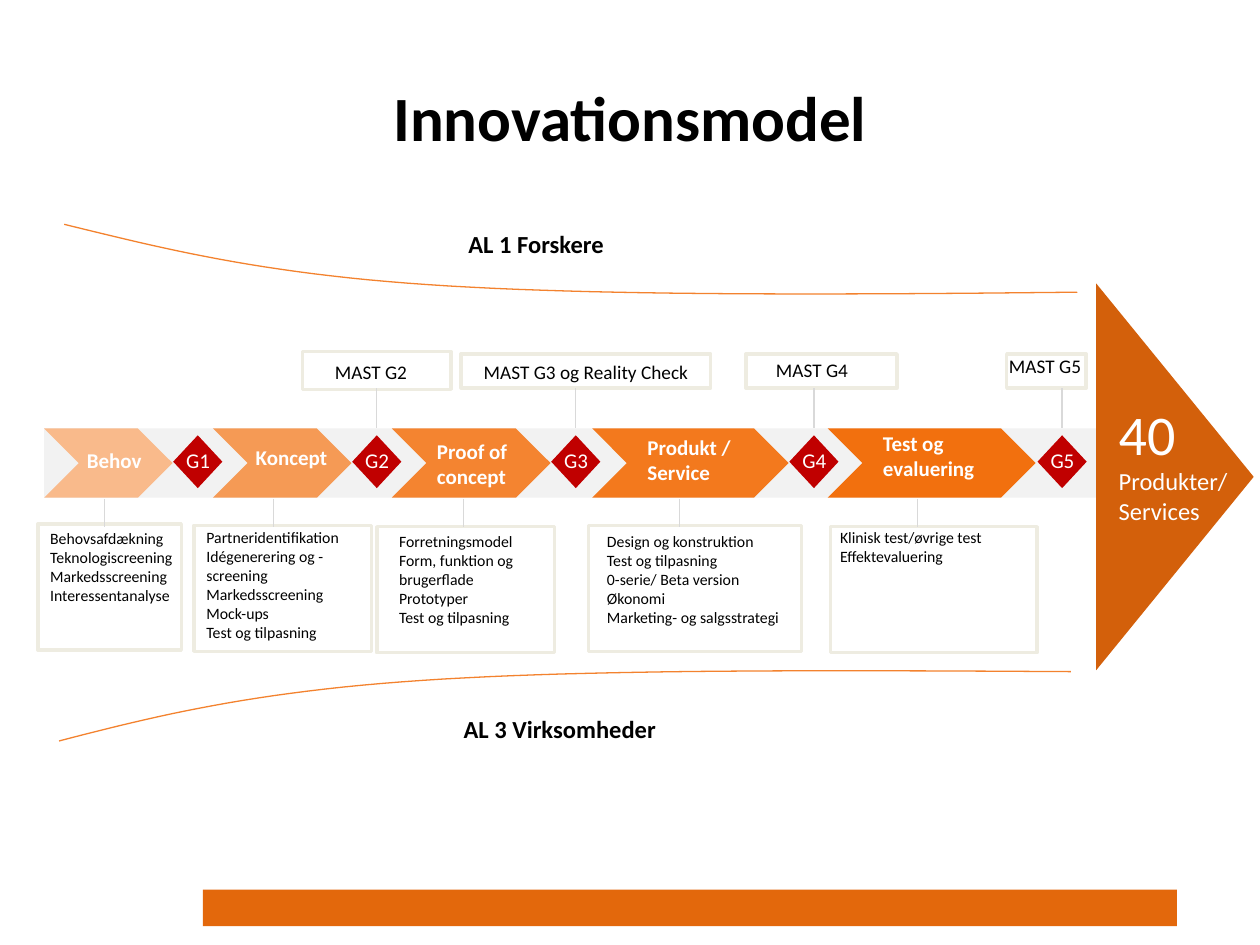
from dataclasses import dataclass
from lxml.etree import SubElement
from pptx import Presentation
from pptx.dml.color import RGBColor
from pptx.enum.shapes import MSO_CONNECTOR, MSO_SHAPE as Shape
from pptx.enum.text import MSO_ANCHOR, PP_ALIGN
from pptx.oxml.ns import qn
from pptx.util import Pt


@dataclass(frozen=True)
class Theme:
    font: str = "Calibri"
    black: str = "000000"
    white: str = "FFFFFF"
    footer: str = "E3680C"
    band: str = "F2F2F2"
    arrow: str = "D3600B"
    gate: str = "C00000"
    curve: str = "F3822E"
    frame: str = "EEECE1"
    link: str = "D9D9D9"
    title: int = 36
    number: int = 32
    heading: int = 14
    stage: int = 12
    mast: int = 11
    detail: int = 9


t = Theme()
prs = Presentation()
prs.slide_width, prs.slide_height = Pt(720), Pt(540)
s = prs.slides.add_slide(prs.slide_layouts[5])


def add_shape(kind, box, fill=None, line=None):
    sp = s.shapes.add_shape(kind, *map(Pt, box))
    sp.shadow.inherit = False
    if fill:
        sp.fill.solid()
        sp.fill.fore_color.rgb = RGBColor.from_string(fill)
    else:
        sp.fill.background()
    if line:
        sp.line.color.rgb = RGBColor.from_string(line)
        sp.line.width = Pt(2)
    else:
        sp.line.fill.background()
    return sp


def write(tf, lines, sizes, color, bold=False):
    tf.word_wrap = True
    for i, (line, size) in enumerate(zip(lines, sizes)):
        p = tf.paragraphs[0] if i == 0 else tf.add_paragraph()
        r = p.add_run()
        r.text = line
        for name, value in {"name": t.font, "size": Pt(size), "bold": bold}.items():
            setattr(r.font, name, value)
        r.font.color.rgb = RGBColor.from_string(color)


title = s.shapes.title
for name, value in {"left": 36, "top": 21.6, "width": 648, "height": 90}.items():
    setattr(title, name, Pt(value))
write(title.text_frame, ["Innovationsmodel"], [t.title], t.black, True)
title.text_frame.vertical_anchor = MSO_ANCHOR.MIDDLE
title.text_frame.paragraphs[0].alignment = PP_ALIGN.CENTER

add_shape(Shape.RECTANGLE, (115.9, 508.3, 556.6, 20.9), t.footer)
add_shape(Shape.RECTANGLE, (25.2, 244.8, 601.2, 39.6), t.band)
add_shape(Shape.ISOSCELES_TRIANGLE, (560.9, 227.5, 221, 90), t.arrow).rotation = 90

texts = []
links = []

stages = [
    (25.2, 73.4, "F9BA8B", (42.5, 252, 54), ["Behov"]),
    (121.7, 79.2, "F59A55", (139, 250.6, 190), ["Koncept"]),
    (223.9, 90.7, "F48430", (242.6, 247, 190), ["Proof of", "concept"]),
    (338.4, 112.3, "F3791D", (362.9, 244.8, 190), ["Produkt /", "Service"]),
    (473, 118.8, "F2700E", (497.5, 242.6, 152), ["Test og", "evaluering"]),
]
for left, width, fill, place, lines in stages:
    add_shape(Shape.CHEVRON, (left, 244.8, width, 39.6), fill)
    texts.append((place, lines, t.stage, t.white, True))

for i, left in enumerate([97.9, 200.2, 313.9, 450, 591.8], 1):
    add_shape(Shape.FLOWCHART_DECISION, (left, 249.8, 30.2, 28.1), t.gate).rotation = 90
    texts.append(((left + 1.4, 252, 39.6), [f"G{i}"], t.stage, t.white, False))
    if i > 1:
        links.append((left + 15.1, 221.8, 244.8))

masts = [
    ((172.8, 200.9, 85, 21.6), (184.3, 202.3, 116), "MAST G2"),
    ((263.5, 202.3, 142.6, 19.4), (269.3, 202.3, 176), "MAST G3 og Reality Check"),
    ((426.2, 202.3, 86.4, 19.4), (436.3, 200.9, 116), "MAST G4"),
    ((575.3, 202.3, 45.4, 19.4), (569.5, 198.7, 116), "MAST G5"),
]
for box, place, label in masts:
    add_shape(Shape.FLOWCHART_PROCESS, box, line=t.frame)
    texts.append((place, [label], t.mast, t.black, False))

activities = [
    ((21.6, 299.5, 82, 72), (21.6, 298.8, 116), 59.8,
     ["Behovsafdækning", "Teknologiscreening", "Markedsscreening", "Interessentanalyse"]),
    ((110.9, 300.2, 101.5, 72), (110.9, 298.1, 116), 156.2,
     ["Partneridentifikation", "Idégenerering og - screening", "Markedsscreening",
      "Mock-ups", "Test og tilpasning"]),
    ((215.3, 301, 101.5, 72), (221, 300.2, 116), 265,
     ["Forretningsmodel", "Form, funktion og brugerflade", "Prototyper",
      "Test og tilpasning"]),
    ((336.2, 300.2, 121.7, 72), (339.8, 300.2, 124.6), 388.1,
     ["Design og konstruktion", "Test og tilpasning", "0-serie/ Beta version",
      "Økonomi", "Marketing- og salgsstrategi"]),
    ((474.5, 301, 118.1, 72), (473, 298.1, 124.6), 524.2,
     ["Klinisk test/øvrige test", "Effektevaluering"]),
]
for box, place, x, lines in activities:
    add_shape(Shape.FLOWCHART_PROCESS, box, line=t.frame)
    texts.append((place, lines, t.detail, t.black, False))
    links.append((x, 285.1, 301))

for x, top, bottom in links:
    link = s.shapes.add_connector(MSO_CONNECTOR.STRAIGHT, Pt(x), Pt(top), Pt(x), Pt(bottom))
    link.line.color.rgb = RGBColor.from_string(t.link)
    link.line.width = Pt(0.75)
    SubElement(link._element.spPr, qn("a:effectLst"))

curves = [
    [(36.7, 128.2), (92.2, 141.8), (148.3, 156.2), (244.8, 162.7),
     (340.6, 169.2), (478.1, 168.5), (615.6, 167)],
    [(33.8, 423.4), (89.3, 409), (144.7, 395.3), (241.2, 388.8),
     (337.7, 382.3), (475.2, 383), (612, 383.8)],
]
steps = 24
for points in curves:
    vertices = []
    for start in (0, 3):
        for i in range(1, steps + 1):
            u = i / steps
            weights = ((1 - u) ** 3, 3 * u * (1 - u) ** 2, 3 * u * u * (1 - u), u ** 3)
            vertices.append(tuple(
                Pt(sum(w * point[axis] for w, point in zip(weights, points[start:start + 4])))
                for axis in (0, 1)))
    builder = s.shapes.build_freeform(*map(Pt, points[0]))
    builder.add_line_segments(vertices, close=False)
    curve = builder.convert_to_shape()
    curve.shadow.inherit = False
    curve.fill.background()
    curve.line.color.rgb = RGBColor.from_string(t.curve)
    curve.line.width = Pt(0.75)

texts += [
    ((260.6, 127.4, 116), ["AL 1 Forskere"], t.heading, t.black, True),
    ((257.8, 404.6, 173), ["AL 3 Virksomheder"], t.heading, t.black, True),
]
for (left, top, width), lines, size, color, bold in texts:
    height = 7.2 + 1.22 * size * len(lines)
    box = s.shapes.add_textbox(Pt(left), Pt(top), Pt(width), Pt(height))
    write(box.text_frame, lines, [size] * len(lines), color, bold)

result = s.shapes.add_textbox(Pt(632.2), Pt(224.6), Pt(86), Pt(80))
write(result.text_frame, ["40", "Produkter/", "Services"],
      [t.number, t.heading, t.heading], t.white)

prs.save("out.pptx")
